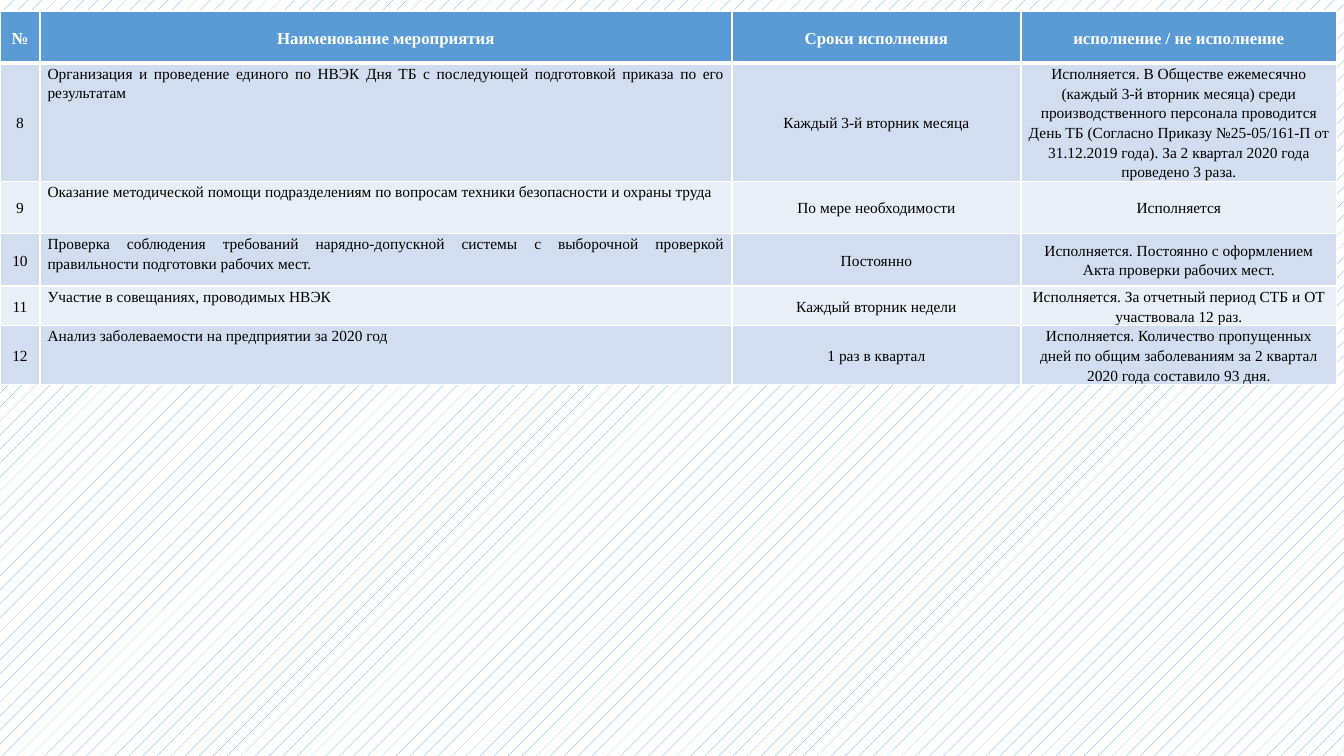
import pptx
import pptx.util
import pptx.dml.color
import pptx.enum.dml
import pptx.enum.text
import pptx.oxml.ns
from lxml import etree

SCALE = 914400 / 100.8
RGB = pptx.dml.color.RGBColor
ALIGN = pptx.enum.text.PP_ALIGN
ANCHOR = pptx.enum.text.MSO_ANCHOR
WHITE = RGB(0xFF, 0xFF, 0xFF)
BLACK = RGB(0x00, 0x00, 0x00)
BLUE = RGB(0x5B, 0x9B, 0xD5)
BANDS = [RGB(0xEA, 0xEF, 0xF7), RGB(0xD2, 0xDE, 0xEF)]
FONT = "Times New Roman"
INSET = pptx.util.Pt(5.4)

COLS = [40, 692, 289, 316]
ROWS = [52, 117, 52, 53, 39, 59]
DATA = [
    ("№", "Наименование мероприятия", "Сроки исполнения",
     "исполнение / не исполнение"),
    ("8", "Организация и проведение единого по НВЭК Дня ТБ с последующей "
     "подготовкой приказа по его результатам",
     "Каждый 3-й вторник месяца",
     "Исполняется. В Обществе ежемесячно (каждый 3-й вторник месяца) среди "
     "производственного персонала проводится День ТБ (Согласно Приказу "
     "№25-05/161-П от 31.12.2019 года). За 2 квартал 2020 года проведено 3 раза."),
    ("9", "Оказание методической помощи подразделениям по вопросам техники "
     "безопасности и охраны труда",
     "По мере необходимости", "Исполняется"),
    ("10", "Проверка соблюдения требований нарядно-допускной системы с "
     "выборочной проверкой правильности подготовки рабочих мест.",
     "Постоянно",
     "Исполняется. Постоянно с оформлением Акта проверки рабочих мест."),
    ("11", "Участие в совещаниях, проводимых НВЭК", "Каждый вторник недели",
     "Исполняется. За отчетный период СТБ и ОТ участвовала 12 раз."),
    ("12", "Анализ заболеваемости на предприятии за 2020 год",
     "1 раз в квартал",
     "Исполняется. Количество пропущенных дней по общим заболеваниям за "
     "2 квартал 2020 года составило 93 дня."),
]


def px(count):
    return pptx.util.Emu(round(count * SCALE))


def set_back(slide):
    fill = slide.background.fill
    fill.patterned()
    fill.pattern = pptx.enum.dml.MSO_PATTERN.PERCENT_5
    fill.fore_color.rgb = BLUE
    fill.back_color.rgb = WHITE


def add_edges(cell, top, bottom):
    """Draw white borders; top and bottom are widths in points."""
    qn = pptx.oxml.ns.qn
    props = cell._tc.get_or_add_tcPr()
    for side, width in (("L", 1), ("R", 1), ("T", top), ("B", bottom)):
        line = etree.SubElement(props, qn("a:ln" + side),
                                w=str(pptx.util.Pt(width)))
        solid = etree.SubElement(line, qn("a:solidFill"))
        etree.SubElement(solid, qn("a:srgbClr"), val=str(WHITE))


def fill_cell(cell, text, row, col):
    head = row == 0
    prose = col == 1 and not head
    add_edges(cell, 3 if row == 1 else 1, 3 if head else 1)
    cell.fill.solid()
    cell.fill.fore_color.rgb = BLUE if head else BANDS[row % 2]
    cell.margin_left = cell.margin_right = INSET
    cell.margin_top = cell.margin_bottom = 0
    cell.vertical_anchor = ANCHOR.TOP if prose else ANCHOR.MIDDLE
    cell.text_frame.text = text
    para = cell.text_frame.paragraphs[0]
    para.alignment = ALIGN.JUSTIFY if prose else ALIGN.CENTER
    para.line_spacing = 1.15
    font = para.runs[0].font
    font.name = FONT
    font.size = pptx.util.Pt(12 if head else 11)
    font.bold = head
    font.color.rgb = WHITE if head else BLACK


def add_plan(slide):
    frame = slide.shapes.add_table(len(ROWS), len(COLS), px(0), px(11),
                                   px(sum(COLS)), px(sum(ROWS)))
    table = frame.table
    table.horz_banding = False
    for col, width in zip(table.columns, COLS):
        col.width = px(width)
    for row, height in zip(table.rows, ROWS):
        row.height = px(height)
    for r, texts in enumerate(DATA):
        for c, text in enumerate(texts):
            fill_cell(table.cell(r, c), text, r, c)


def main():
    deck = pptx.Presentation()
    deck.slide_width = px(1344)
    deck.slide_height = px(756)
    slide = deck.slides.add_slide(deck.slide_layouts[6])
    set_back(slide)
    add_plan(slide)
    deck.save("out.pptx")


if __name__ == "__main__":
    main()
